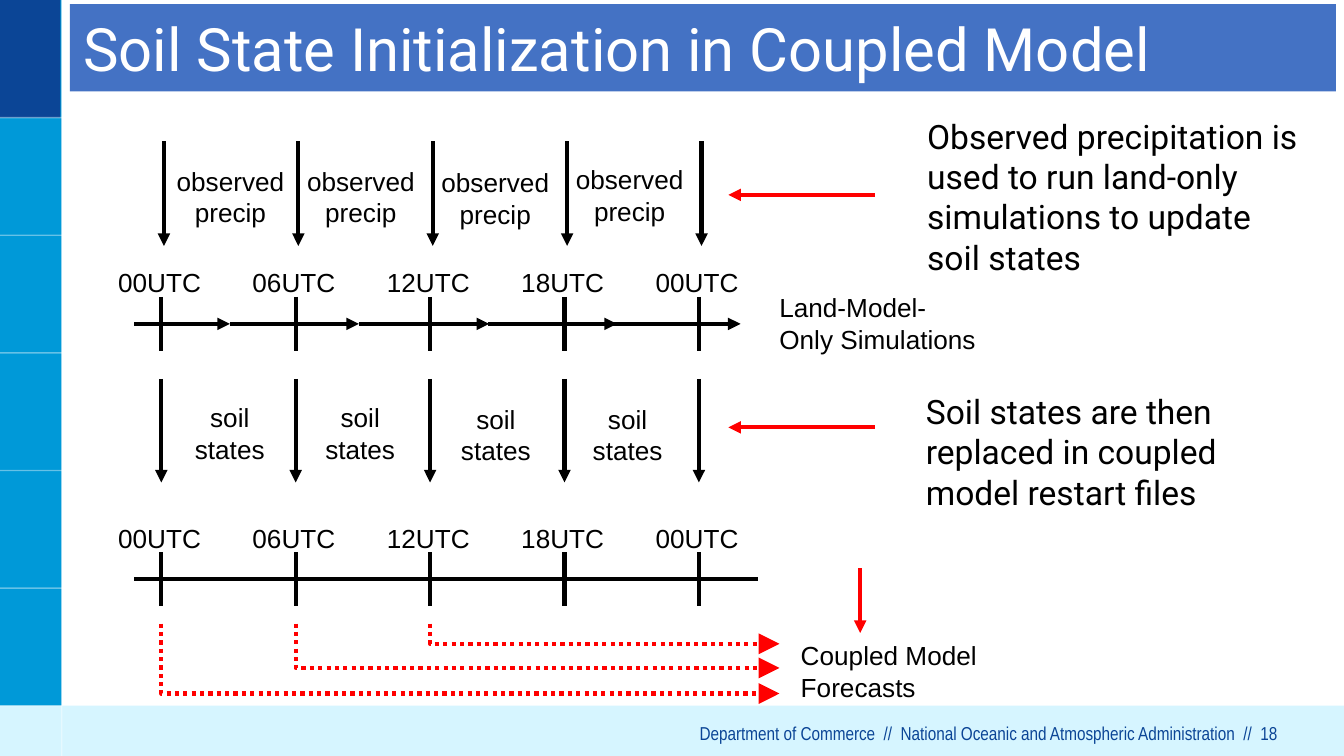
from pptx import Presentation
from pptx.dml.color import RGBColor
from pptx.enum.dml import MSO_LINE
from pptx.enum.shapes import MSO_CONNECTOR, MSO_SHAPE
from pptx.enum.text import MSO_ANCHOR, MSO_AUTO_SIZE, PP_ALIGN
from pptx.oxml.ns import qn
from pptx.util import Inches, Pt
from lxml.etree import SubElement

COLORS = {"sky": "0099D8", "navy": "0B4596", "ice": "D6F5FF", "banner": "4472C4",
          "white": "FFFFFF", "black": "000000", "red": "FF0000"}
LABEL = {"name": "Arial", "size": Pt(14), "color": "black"}
NOTE = {"name": "Roboto", "size": Pt(18), "color": "black"}
HEADING = {"name": "Roboto", "size": Pt(32), "color": "white"}
FOOTER = {"name": "Arial Narrow", "size": Pt(10), "color": "navy"}
INSETS = ("margin_left", "margin_right", "margin_top", "margin_bottom")
TIMES = ["00UTC", "06UTC", "12UTC", "18UTC", "00UTC"]
WIDTH, HEIGHT = 10, 5.625
FIRST, STEP = 1.2, 1
BAND = HEIGHT * 0.1556

deck = Presentation()
deck.slide_width, deck.slide_height = Inches(WIDTH), Inches(HEIGHT)
page = deck.slides.add_slide(deck.slide_layouts[5])


def write(box, text, style, frame_format, align=PP_ALIGN.LEFT):
    for name, value in frame_format.items():
        setattr(box.text_frame, name, value)
    para = box.text_frame.paragraphs[0]
    para.alignment = align
    for index, line in enumerate(text.splitlines()):
        if index:
            para.add_line_break()
        span = para.add_run()
        span.text = line
        for name, value in style.items():
            if name == "color":
                span.font.color.rgb = RGBColor.from_string(COLORS[value])
            else:
                setattr(span.font, name, value)


def draw_line(start, end, color="black", weight=2.25, head=None, kind=MSO_CONNECTOR.STRAIGHT):
    connector = page.shapes.add_connector(kind, *map(Inches, start + end))
    connector.line.color.rgb = RGBColor.from_string(COLORS[color])
    connector.line.width = Pt(weight)
    if head:
        SubElement(connector.line._get_or_add_ln(), qn("a:tailEnd"), type="triangle", w=head, len=head)
    SubElement(connector._element.spPr, qn("a:effectLst"))
    return connector


for color, area in [("sky", (0, 0, 0.46, HEIGHT)), ("navy", (0, 0, 0.45, BAND)),
                    ("ice", (0, 5.25, WIDTH, 0.38))]:
    panel = page.shapes.add_shape(MSO_SHAPE.RECTANGLE, *map(Inches, area))
    panel.shadow.inherit = False
    panel.fill.solid()
    panel.fill.fore_color.rgb = RGBColor.from_string(COLORS[color])
    panel.line.fill.background()

dividers = [((0, row * BAND), (0.46, row * BAND)) for row in range(1, 7)]
for start, end in dividers + [((0.46, 0), (0.46, HEIGHT))]:
    divider = draw_line(start, end, "white", 0.75)
    SubElement(divider._element.spPr.find(".//" + qn("a:srgbClr")), qn("a:alpha"), val="40000")

title = page.shapes.title
title.left, title.top, title.width, title.height = map(Inches, (0.52, 0.03, 9.42, 0.65))
title.fill.solid()
title.fill.fore_color.rgb = RGBColor.from_string(COLORS["banner"])
wide_insets = dict.fromkeys(INSETS, Inches(0.1))
write(title, "Soil State Initialization in Coupled Model", HEADING,
      {"vertical_anchor": MSO_ANCHOR.MIDDLE, "auto_size": MSO_AUTO_SIZE.NONE,
       "word_wrap": True, **wide_insets})

wrapped = {"word_wrap": True, "auto_size": MSO_AUTO_SIZE.SHAPE_TO_FIT_TEXT}
single = {**wrapped, "word_wrap": False}
roomy = {**wrapped, **wide_insets}
flush = {"word_wrap": True, **dict.fromkeys(INSETS, 0)}
texts = [
    ("Department of Commerce  //  National Oceanic and Atmospheric Administration  //  18",
     (1.58, 5.37, 7.92, 0.13), FOOTER, flush, PP_ALIGN.RIGHT),
    ("Observed precipitation is used to run land-only simulations to update soil states",
     (6.8, 0.76, 3.02, 1.41), NOTE, roomy, PP_ALIGN.LEFT),
    ("Soil states are then replaced in coupled model restart files",
     (6.79, 2.81, 3.02, 1.11), NOTE, roomy, PP_ALIGN.LEFT),
    ("Land-Model-Only Simulations", (5.7, 2.12, 1.68, 0.57), LABEL, wrapped, PP_ALIGN.LEFT),
    ("Coupled Model Forecasts", (5.86, 4.71, 1.53, 0.57), LABEL, wrapped, PP_ALIGN.LEFT),
]
for axis in (2.41, 4.31):
    for column, time in enumerate(TIMES):
        area = (FIRST - 0.42 + column * STEP, axis - 0.475, 0.82, 0.34)
        texts.append((time, area, LABEL, single, PP_ALIGN.LEFT))
for left, top in [(1.17, 1.18), (2.14, 1.18), (3.14, 1.19), (4.14, 1.17)]:
    texts.append(("observed precip", (left, top, 1.09, 0.57), LABEL, wrapped, PP_ALIGN.CENTER))
for left, top in [(1.35, 2.94), (2.32, 2.94), (3.33, 2.95), (4.31, 2.95)]:
    texts.append(("soil\nstates", (left, top, 0.72, 0.57), LABEL, single, PP_ALIGN.CENTER))
for text, area, style, frame_format, align in texts:
    write(page.shapes.add_textbox(*map(Inches, area)), text, style, frame_format, align)

for column in range(len(TIMES)):
    x = FIRST + column * STEP
    for axis in (2.41, 4.31):
        draw_line((x, axis - 0.2), (x, axis + 0.2))
    draw_line((x + 0.02, 1.05), (x + 0.02, 1.83), head="med")
    draw_line((x, 2.82), (x, 3.59), head="med")

for start, end in [(1, 1.71), (1.71, 2.67), (2.67, 3.64), (3.63, 4.59), (4.55, 5.51)]:
    draw_line((start, 2.41), (end, 2.41), head="med")
draw_line((1, 4.31), (5.64, 4.31))

for column, bottom in enumerate((5.16, 4.97, 4.79)):
    forecast = draw_line((FIRST + column * STEP, 4.64), (5.8, bottom), "red",
                         head="lg", kind=MSO_CONNECTOR.ELBOW)
    forecast.line.dash_style = MSO_LINE.ROUND_DOT
    guides = forecast._element.spPr.find(qn("a:prstGeom")).get_or_add_avLst()
    SubElement(guides, qn("a:gd"), name="adj1", fmla="val 0")

for start, end in [((6.51, 1.45), (5.42, 1.45)), ((6.51, 3.18), (5.42, 3.18)),
                   ((6.4, 4.23), (6.4, 4.71))]:
    draw_line(start, end, "red", head="med")

deck.save("out.pptx")
